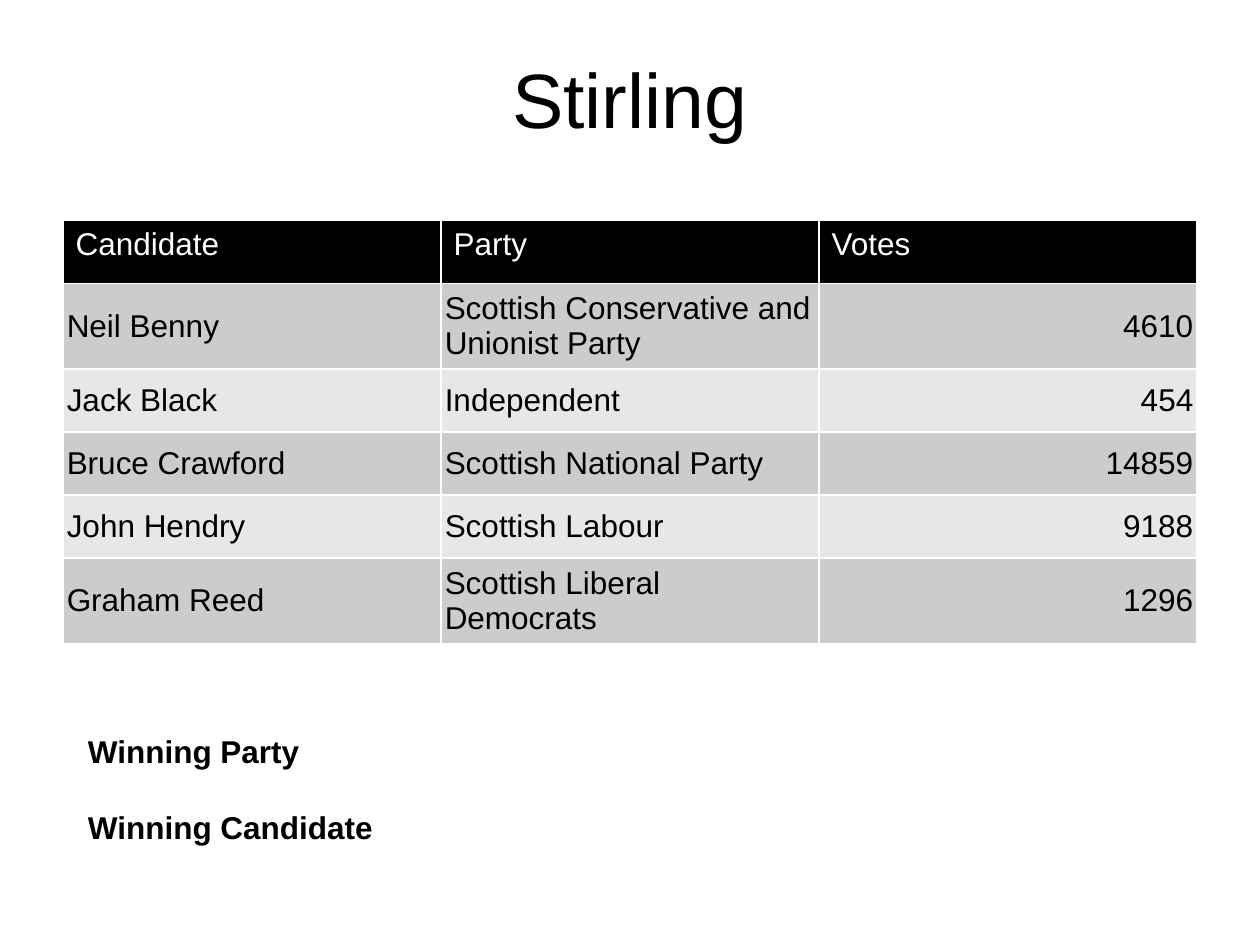
"""Build the slide of votes cast in Stirling."""
import dataclasses
import typing

import pptx
import pptx.dml.color
import pptx.enum.text
import pptx.util

WIDE, HIGH = 10, 7.5
FONT = "Arial"
HUES = {"ink": "000000", "paper": "FFFFFF", "dark": "CCCCCC", "light": "E7E7E7"}
ALIGN = pptx.enum.text.PP_ALIGN
ANCHOR = pptx.enum.text.MSO_ANCHOR


@dataclasses.dataclass
class Box:
    """Hold a place as shares of the slide's size."""
    left: float
    top: float
    width: float
    height: float

    def place(self) -> tuple[int, ...]:
        """Return left, top, width and height as lengths."""
        return tuple(pptx.util.Inches(share * size) for share, size in (
            (self.left, WIDE), (self.top, HIGH), (self.width, WIDE), (self.height, HIGH)))


@dataclasses.dataclass
class Entry:
    """Hold one table row."""
    name: str
    party: str
    votes: str


HEAD = Entry("Candidate", "Party", "Votes")
ENTRIES = [
    Entry("Neil Benny", "Scottish Conservative and Unionist Party", "4610"),
    Entry("Jack Black", "Independent", "454"),
    Entry("Bruce Crawford", "Scottish National Party", "14859"),
    Entry("John Hendry", "Scottish Labour", "9188"),
    Entry("Graham Reed", "Scottish Liberal Democrats", "1296"),
]


def write(frame: typing.Any, text: str, *, size: float = 18, hue: str = "ink",
          bold: bool = False, align: ALIGN = ALIGN.LEFT, gap: float = 0) -> None:
    """Write each line of text as a paragraph, with a gap between them."""
    frame.text = text
    frame.word_wrap = True
    for place, para in enumerate(frame.paragraphs):
        para.alignment = align
        para.space_before = pptx.util.Pt(gap if place else 0)
        font = para.runs[0].font
        font.name, font.size, font.bold = FONT, pptx.util.Pt(size), bold
        font.color.rgb = pptx.dml.color.RGBColor.from_string(HUES[hue])


def draw_table(slide: typing.Any, box: Box) -> None:
    """Draw the header and the banded rows of votes."""
    rows = [HEAD, *ENTRIES]
    table = slide.shapes.add_table(len(rows), 3, *box.place()).table
    for r, entry in enumerate(rows):
        for c, text in enumerate(dataclasses.astuple(entry)):
            cell = table.cell(r, c)
            fill = "ink" if r == 0 else "dark" if r % 2 else "light"
            cell.fill.solid()
            cell.fill.fore_color.rgb = pptx.dml.color.RGBColor.from_string(HUES[fill])
            if r:
                cell.vertical_anchor = ANCHOR.MIDDLE
                cell.margin_left = cell.margin_right = pptx.util.Inches(0.03)
                cell.margin_top = cell.margin_bottom = pptx.util.Inches(0.06)
            write(cell.text_frame, text, hue="ink" if r else "paper",
                  align=ALIGN.RIGHT if r and c == 2 else ALIGN.LEFT)


def main() -> None:
    """Build and save the slide."""
    deck = pptx.Presentation()
    deck.slide_width, deck.slide_height = pptx.util.Inches(WIDE), pptx.util.Inches(HIGH)
    slide = deck.slides.add_slide(deck.slide_layouts[5])

    title = slide.shapes.title
    title.left, title.top, title.width, title.height = Box(0.05, 0.04, 0.9, 0.17).place()
    title.text_frame.vertical_anchor = ANCHOR.TOP
    title.text_frame.margin_top = pptx.util.Inches(0.11)
    write(title.text_frame, "Stirling", size=44, align=ALIGN.CENTER)

    draw_table(slide, Box(0.05, 1.75 / HIGH, 0.9, 3 / HIGH))

    frame = slide.shapes.add_textbox(*Box(0.06, 5.73 / HIGH, 0.85, 1.01 / HIGH).place()).text_frame
    frame.margin_top = pptx.util.Inches(0.08)
    write(frame, "Winning Party\nWinning Candidate", bold=True, gap=22)

    deck.save("out.pptx")


if __name__ == "__main__":
    main()
